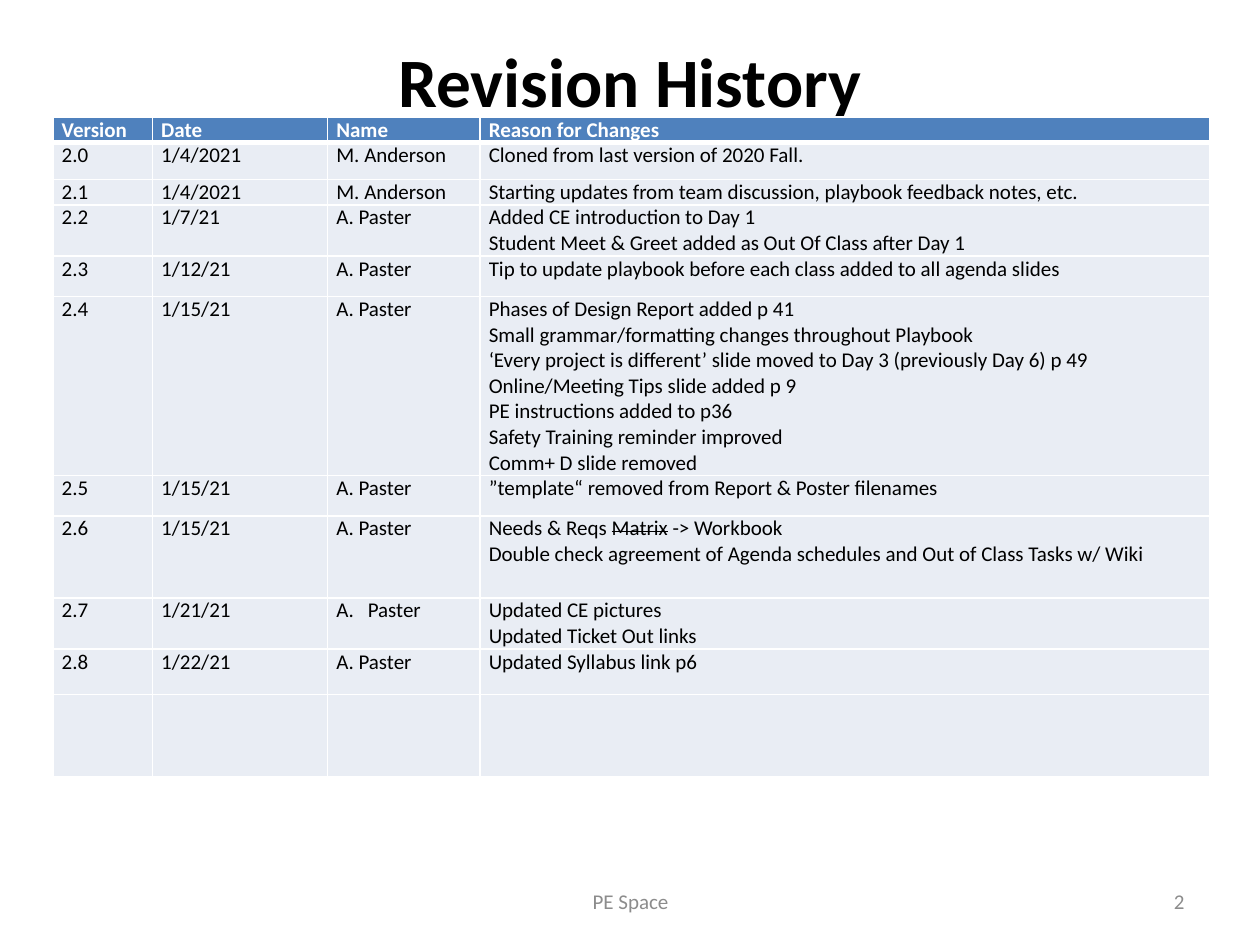
import pptx
import pptx.util
import pptx.dml.color
import pptx.enum.text
import pptx.oxml.ns
import lxml.etree

Inches = pptx.util.Inches
Pt = pptx.util.Pt
ALIGN = pptx.enum.text.PP_ALIGN
ANCHOR = pptx.enum.text.MSO_ANCHOR

HEADINGS = ["Version", "Date", "Name", "Reason for Changes"]
COLUMN_WIDTHS = [0.79, 1.39, 1.21, 5.79]
ROW_HEIGHTS = [0.15, 0.29, 0.15, 0.29, 0.32, 0.65, 0.32, 0.65, 0.3, 0.36, 0.65]

# Each reason is a list of lines; a line in several parts strikes out every second part
REVISIONS = [
    ("2.0", "1/4/2021", "M. Anderson", ["Cloned from last version of 2020 Fall."]),
    ("2.1", "1/4/2021", "M. Anderson",
     ["Starting updates from team discussion, playbook feedback notes, etc."]),
    ("2.2", "1/7/21", "A. Paster",
     ["Added CE introduction to Day 1",
      "Student Meet & Greet added as Out Of Class after Day 1"]),
    ("2.3", "1/12/21", "A. Paster",
     ["Tip to update playbook before each class added to all agenda slides"]),
    ("2.4", "1/15/21", "A. Paster",
     ["Phases of Design Report added p 41",
      "Small grammar/formatting changes throughout Playbook",
      "‘Every project is different’ slide moved to Day 3 (previously Day 6) p 49",
      "Online/Meeting Tips slide added p 9",
      "PE instructions added to p36",
      "Safety Training reminder improved",
      "Comm+ D slide removed"]),
    ("2.5", "1/15/21", "A. Paster",
     ["”template“ removed from Report & Poster filenames"]),
    ("2.6", "1/15/21", "A. Paster",
     [("Needs & Reqs ", "Matrix", " -> Workbook"),
      "Double check agreement of Agenda schedules and Out of Class Tasks w/ Wiki"]),
    ("2.7", "1/21/21", "Paster", ["Updated CE pictures", "Updated Ticket Out links"]),
    ("2.8", "1/22/21", "A. Paster", ["Updated Syllabus link p6"]),
]
LETTERED_NAME = (8, 2)  # row and column of the name numbered with a letter


def color(value):
    return pptx.dml.color.RGBColor.from_string(value)


def add_element(parent, tag, **attributes):
    return lxml.etree.SubElement(parent, pptx.oxml.ns.qn(tag), attributes)


class SlideBuilder:
    font = "Calibri"
    black, white, gray = "000000", "FFFFFF", "8C8C8C"
    header_fill, body_fill = "4F81BD", "E9EDF4"

    def __init__(self, page):
        self.page = page

    def span(self, para, text, size, ink, bold=False, strike=False):
        span = para.add_run()
        span.text = text
        span.font.name = self.font
        span.font.size = Pt(size)
        span.font.bold = bold
        span.font.color.rgb = color(ink)
        if strike:
            span.font._element.set("strike", "sngStrike")

    def title(self, text, left, top, width, height):
        box = self.page.shapes.title
        box.left, box.top, box.width, box.height = map(Inches, (left, top, width, height))
        frame = box.text_frame
        frame.vertical_anchor = ANCHOR.TOP
        frame.margin_top = 0
        para = frame.paragraphs[0]
        para.alignment = ALIGN.CENTER
        self.span(para, text, 39.6, self.black, bold=True)

    def footer(self, text, left, top, width, height, alignment):
        box = self.page.shapes.add_textbox(*map(Inches, (left, top, width, height)))
        frame = box.text_frame
        frame.word_wrap = True
        frame.vertical_anchor = ANCHOR.MIDDLE
        para = frame.paragraphs[0]
        para.alignment = alignment
        self.span(para, text, 12, self.gray)

    def borders(self, cell, top, bottom):
        properties = cell._tc.get_or_add_tcPr()
        sides = (("a:lnL", 1), ("a:lnR", 1), ("a:lnT", top), ("a:lnB", bottom))
        for position, (side, points) in enumerate(sides):
            line = add_element(properties, side, w=str(Pt(points)))
            add_element(add_element(line, "a:solidFill"), "a:srgbClr", val=self.white)
            properties.insert(position, line)

    def letter(self, para):
        properties = para._p.get_or_add_pPr()
        properties.set("marL", str(Inches(0.25)))
        properties.set("indent", str(Inches(-0.25)))
        add_element(properties, "a:buFont", typeface="+mj-lt")
        add_element(properties, "a:buAutoNum", type="alphaUcPeriod")

    def cell(self, cell, lines, row):
        is_header = row == 0
        cell.margin_left = cell.margin_right = Inches(0.07)
        cell.margin_top = cell.margin_bottom = 0
        cell.fill.solid()
        cell.fill.fore_color.rgb = color(self.header_fill if is_header else self.body_fill)
        self.borders(cell, top=3 if row == 1 else 1, bottom=3 if is_header else 1)
        frame = cell.text_frame
        for number, line in enumerate(lines):
            para = frame.add_paragraph() if number else frame.paragraphs[0]
            parts = [line] if isinstance(line, str) else line
            for index, part in enumerate(parts):
                self.span(para, part, 12, self.white if is_header else self.black,
                          bold=is_header, strike=index % 2 == 1)

    def table(self, rows, left, top, widths, heights):
        table = self.page.shapes.add_table(
            len(heights), len(widths), Inches(left), Inches(top),
            Inches(sum(widths)), Inches(sum(heights))).table
        table.horz_banding = False
        for column, width in zip(table.columns, widths):
            column.width = Inches(width)
        for row, height in enumerate(heights):
            table.rows[row].height = Inches(height)
            for column in range(len(widths)):
                content = rows[row][column] if row < len(rows) else []
                lines = [content] if isinstance(content, str) else content
                self.cell(table.cell(row, column), lines, row)
        return table


def main():
    deck = pptx.Presentation()
    deck.slide_width, deck.slide_height = Inches(10), Inches(7.5)
    builder = SlideBuilder(deck.slides.add_slide(deck.slide_layouts[5]))

    # Title
    builder.title("Revision History", 0.5, 0.3, 9, 1.25)

    # Revision table, with one unused row at the end
    table = builder.table([HEADINGS] + REVISIONS, 0.42, 0.93, COLUMN_WIDTHS, ROW_HEIGHTS)
    builder.letter(table.cell(*LETTERED_NAME).text_frame.paragraphs[0])

    # Footer and page number
    builder.footer("PE Space", 3.42, 6.95, 3.17, 0.4, ALIGN.CENTER)
    builder.footer("2", 7.17, 6.95, 2.33, 0.4, ALIGN.RIGHT)

    deck.save("out.pptx")


if __name__ == "__main__":
    main()
